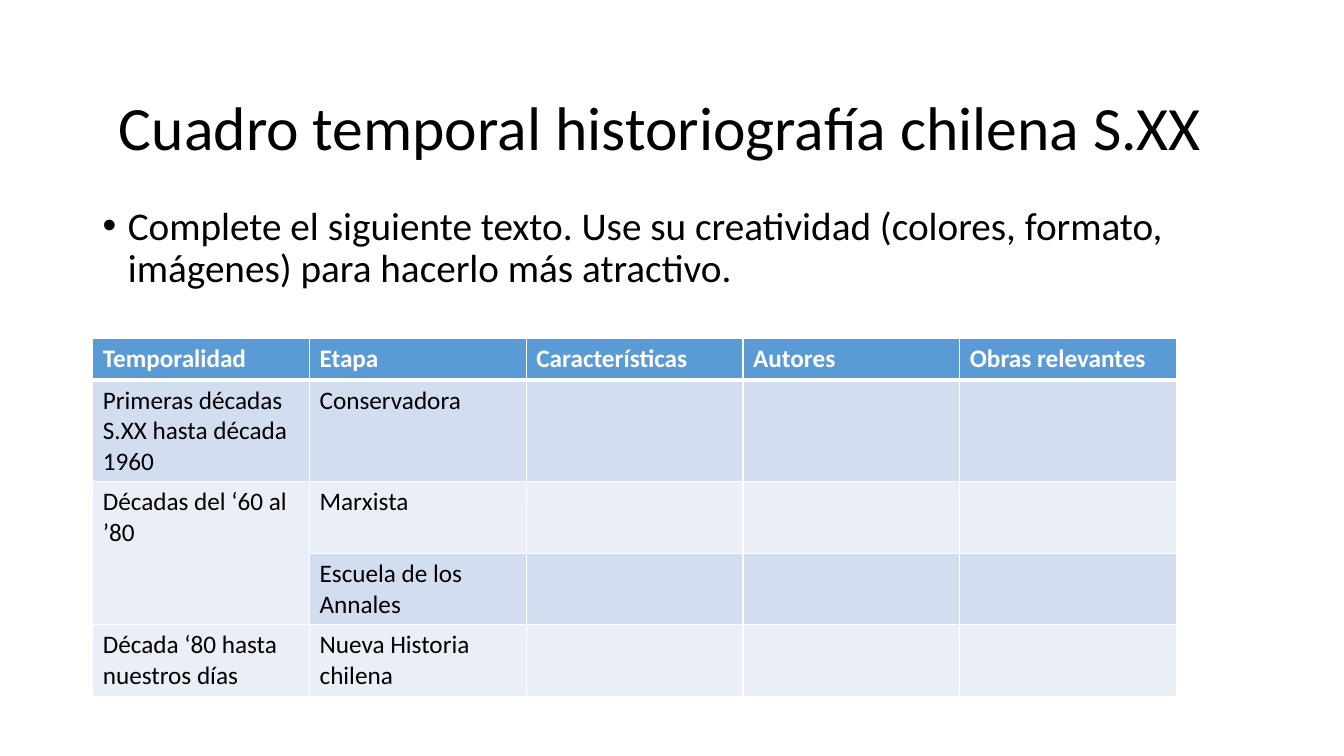
from dataclasses import dataclass

from lxml.etree import SubElement
from pptx import Presentation
from pptx.dml.color import RGBColor as Rgb
from pptx.enum.text import MSO_ANCHOR as Anchor, MSO_AUTO_SIZE as AutoSize, PP_ALIGN as Align
from pptx.oxml.ns import qn
from pptx.util import Pt

EMU_PER_PX = 9144  # 100 px to the inch


@dataclass(frozen=True)
class Theme:
    font: str = "Calibri"
    title_size: int = 44
    body_size: int = 28
    cell_size: int = 18
    ink: str = "000000"
    paper: str = "FFFFFF"
    header: str = "5B9BD5"
    bands: tuple = ("D2DEEF", "EAEFF7")
    grid_width: int = 1
    header_rule: int = 3


def px(length):
    return length * EMU_PER_PX


class SlideBuilder:
    def __init__(self, deck, theme):
        self.theme = theme
        self.slide = deck.slides.add_slide(deck.slide_layouts[5])

    def text_run(self, paragraph, text, size, color, bold=False):
        run = paragraph.add_run()
        run.text = text
        run.font.name = self.theme.font
        run.font.size = Pt(size)
        run.font.bold = bold
        run.font.color.rgb = Rgb.from_string(color)

    def title(self, text, left, top, width, height):
        heading = self.slide.shapes.title
        heading.left, heading.top = px(left), px(top)
        heading.width, heading.height = px(width), px(height)
        frame = heading.text_frame
        frame.auto_size = AutoSize.NONE
        frame.vertical_anchor = Anchor.MIDDLE
        paragraph = frame.paragraphs[0]
        paragraph.alignment = Align.LEFT
        paragraph.line_spacing = 0.9
        self.text_run(paragraph, text, self.theme.title_size, self.theme.ink)

    def bullet(self, text, left, top, width, height, indent):
        box = self.slide.shapes.add_textbox(px(left), px(top), px(width), px(height))
        box.text_frame.word_wrap = True
        paragraph = box.text_frame.paragraphs[0]
        paragraph.line_spacing = 0.9
        paragraph.space_before = Pt(10)
        properties = paragraph._p.get_or_add_pPr()
        properties.set("marL", str(px(indent)))
        properties.set("indent", str(-px(indent)))
        SubElement(properties, qn("a:buFont"), typeface="Arial")
        SubElement(properties, qn("a:buChar"), char="•")
        self.text_run(paragraph, text, self.theme.body_size, self.theme.ink)

    def cell_borders(self, cell, **widths):
        """Draw the sides L, R, T and B, in that order, with widths in points."""
        properties = cell._tc.get_or_add_tcPr()
        for side, width in widths.items():
            line = SubElement(properties, qn(f"a:ln{side}"), w=str(Pt(width)))
            solid = SubElement(line, qn("a:solidFill"))
            SubElement(solid, qn("a:srgbClr"), val=self.theme.paper)

    def table(self, rows, left, top, column_width, row_heights):
        theme = self.theme
        columns = len(rows[0])
        grid = self.slide.shapes.add_table(
            len(rows), columns, px(left), px(top),
            px(column_width * columns), px(sum(row_heights))).table
        grid.horz_banding = False
        for column in grid.columns:
            column.width = px(column_width)
        for r, (texts, height) in enumerate(zip(rows, row_heights)):
            grid.rows[r].height = px(height)
            is_header = r == 0
            fill = theme.header if is_header else theme.bands[(r - 1) % 2]
            for c in range(columns):
                cell = grid.cell(r, c)
                thin, thick = theme.grid_width, theme.header_rule
                self.cell_borders(cell, L=thin, R=thin,
                                  T=thick if r == 1 else thin,
                                  B=thick if is_header else thin)
                cell.fill.solid()
                cell.fill.fore_color.rgb = Rgb.from_string(fill)
                if c < len(texts) and texts[c]:
                    self.text_run(cell.text_frame.paragraphs[0], texts[c], theme.cell_size,
                                  theme.paper if is_header else theme.ink, is_header)
        return grid


STAGES = [
    ("Temporalidad", "Etapa", "Características", "Autores", "Obras relevantes"),
    ("Primeras décadas S.XX hasta década 1960", "Conservadora"),
    ("Décadas del ‘60 al ’80", "Marxista"),
    ("", "Escuela de los Annales"),
    ("Década ‘80 hasta nuestros días", "Nueva Historia chilena"),
]


def main():
    deck = Presentation()
    deck.slide_width, deck.slide_height = px(1333), px(750)
    builder = SlideBuilder(deck, Theme())
    builder.title("Cuadro temporal historiografía chilena S.XX", 108, 57, 1150, 145)
    builder.bullet("Complete el siguiente texto. Use su creatividad (colores, formato, "
                   "imágenes) para hacerlo más atractivo.", 92, 200, 1150, 476, indent=25)
    stages = builder.table(STAGES, 92, 336, 215, [41, 101, 71, 71, 71])
    stages.cell(2, 0).merge(stages.cell(3, 0))
    deck.save("out.pptx")


if __name__ == "__main__":
    main()
